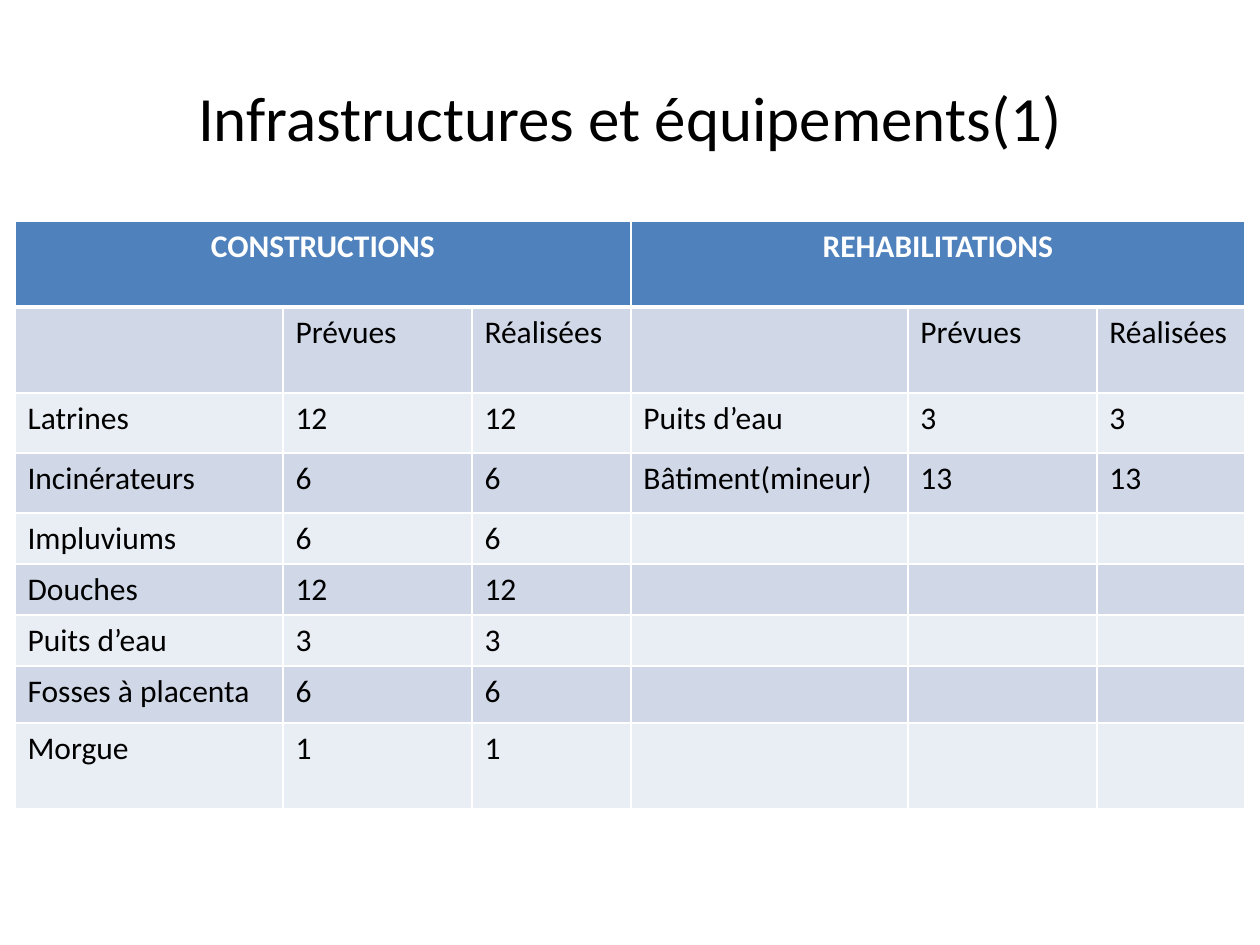
"""Build the slide on planned and completed infrastructure works."""
from lxml.etree import SubElement
from pptx import Presentation
from pptx.dml.color import RGBColor
from pptx.enum.text import MSO_ANCHOR, PP_ALIGN
from pptx.oxml.ns import qn
from pptx.util import Pt

PX = 914400 // 126
WHITE = RGBColor(0xFF, 0xFF, 0xFF)
BLACK = RGBColor(0, 0, 0)
BLUE = RGBColor(0x4F, 0x81, 0xBD)
BANDS = RGBColor(0xD0, 0xD8, 0xE8), RGBColor(0xE9, 0xED, 0xF4)


def style(para, size, color, bold=False):
    look = {"name": "Calibri", "size": Pt(size), "bold": bold}
    for run in para.runs:
        for key, value in look.items():
            setattr(run.font, key, value)
        run.font.color.rgb = color


def edge(cell, side, width):
    line = SubElement(cell._tc.get_or_add_tcPr(), qn(f"a:ln{side}"), w=str(Pt(width)))
    fill = SubElement(line, qn("a:solidFill"))
    SubElement(fill, qn("a:srgbClr"), val=str(WHITE))


deck = Presentation()
deck.slide_width, deck.slide_height = 1260 * PX, 945 * PX
slide = deck.slides.add_slide(deck.slide_layouts[5])

title = slide.shapes.title
place = {"left": 63, "top": 38, "width": 1134, "height": 157}
for key, value in place.items():
    setattr(title, key, value * PX)
frame = title.text_frame
frame.text = "Infrastructures et équipements(1)"
frame.vertical_anchor = MSO_ANCHOR.MIDDLE
frame.paragraphs[0].alignment = PP_ALIGN.CENTER
style(frame.paragraphs[0], 36, BLACK)

rows = [
    ["CONSTRUCTIONS", "", "", "REHABILITATIONS", "", ""],
    ["", "Prévues", "Réalisées"] * 2,
    ["Latrines", "12", "12", "Puits d’eau", "3", "3"],
    ["Incinérateurs", "6", "6", "Bâtiment(mineur)", "13", "13"],
    ["Impluviums", "6", "6", "", "", ""],
    ["Douches", "12", "12", "", "", ""],
    ["Puits d’eau", "3", "3", "", "", ""],
    ["Fosses à placenta", "6", "6", "", "", ""],
    ["Morgue", "1", "1", "", "", ""],
]
wide = [268, 189, 159, 277, 189, 148]
high = [86, 86, 60, 60, 51, 51, 51, 57, 86]
grid = slide.shapes.add_table(
    len(rows), len(wide), 15 * PX, 221 * PX, sum(wide) * PX, sum(high) * PX
).table
for col, width in zip(grid.columns, wide):
    col.width = width * PX
for row, height in zip(grid.rows, high):
    row.height = height * PX
for start in (0, 3):
    grid.cell(0, start).merge(grid.cell(0, start + 2))

for r, texts in enumerate(rows):
    head = r == 0
    for c, text in enumerate(texts):
        cell = grid.cell(r, c)
        for side in "LRTB":
            thick = (head and side == "B") or (r == 1 and side == "T")
            edge(cell, side, 3 if thick else 1)
        cell.fill.solid()
        cell.fill.fore_color.rgb = BLUE if head else BANDS[(r - 1) % 2]
        if text:
            cell.text = text
            para = cell.text_frame.paragraphs[0]
            para.alignment = PP_ALIGN.CENTER if head else PP_ALIGN.LEFT
            style(para, 18, WHITE if head else BLACK, head)

deck.save("out.pptx")
